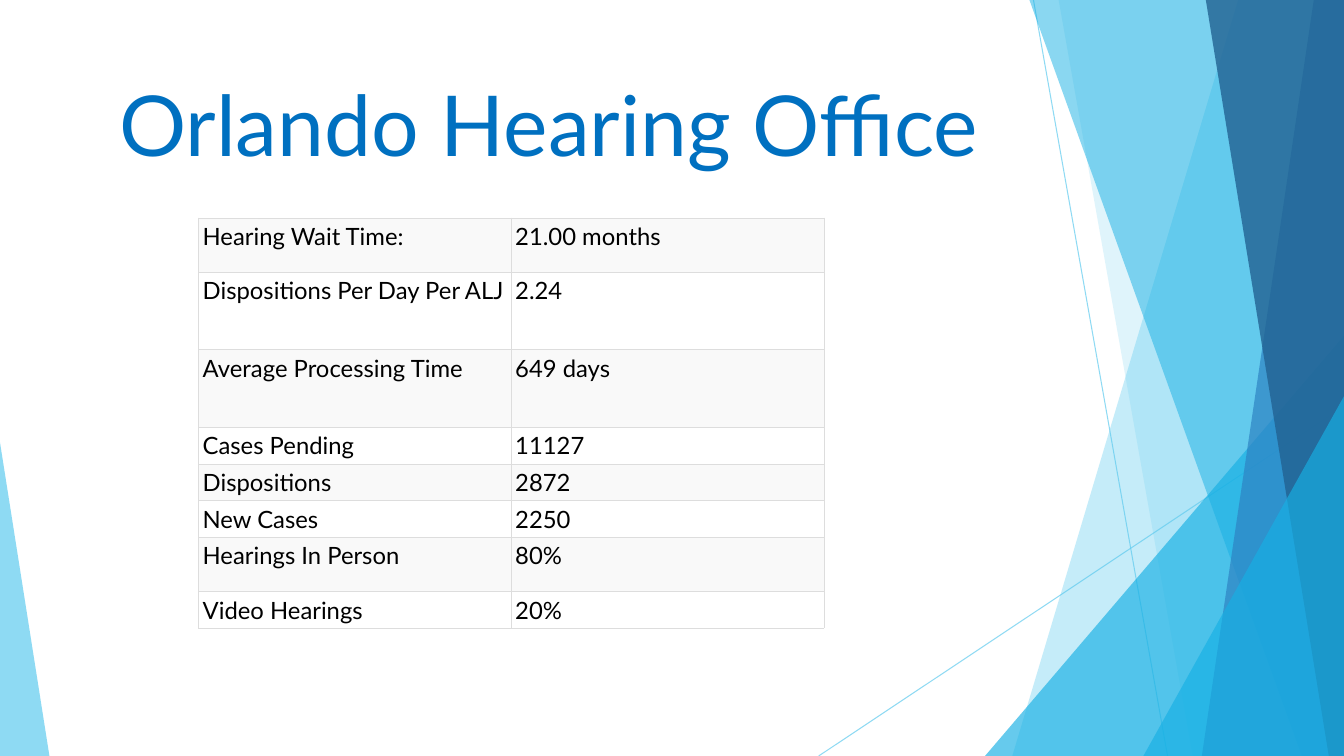
from lxml import etree
from pptx import Presentation
from pptx.dml.color import RGBColor
from pptx.enum.shapes import MSO_CONNECTOR, MSO_SHAPE
from pptx.enum.text import MSO_ANCHOR, PP_ALIGN
from pptx.oxml.ns import qn
from pptx.util import Inches, Pt

STRAIGHT = MSO_CONNECTOR.STRAIGHT
TRIANGLE = MSO_SHAPE.ISOSCELES_TRIANGLE
CENTER = PP_ALIGN.CENTER
TOP = MSO_ANCHOR.TOP

FONT = "Lato"
WIDTH, HEIGHT = 13.33, 7.5
SKY, CYAN, BLUE, NAVY = "5FCBEF", "17B0E4", "2E83C3", "226292"

# Bands reaching the right edge: top left x, bottom left x, colour, opacity %
BACK_BANDS = [(12.28, 10.04, SKY, 36), (10.5, 11.83, SKY, 20)]
FRONT_BANDS = [
    (10.21, 12.91, CYAN, 50),
    (13.03, 11.92, BLUE, 70),
    (11.96, 13.18, NAVY, 80),
]

# Label, value, row height
STATISTICS = [
    ("Hearing Wait Time:", "21.00 months", 0.54),
    ("Dispositions Per Day Per ALJ", "2.24", 0.77),
    ("Average Processing Time", "649 days", 0.77),
    ("Cases Pending", "11127", 0.36),
    ("Dispositions", "2872", 0.36),
    ("New Cases", "2250", 0.36),
    ("Hearings In Person", "80%", 0.54),
    ("Video Hearings", "20%", 0.36),
]


def rgb(color):
    return RGBColor.from_string(color)


def set_opacity(fill_owner, percent):
    color = next(fill_owner.iter(qn("a:srgbClr")))
    etree.SubElement(color, qn("a:alpha"), val=str(percent * 1000))


def paint(shape, color, opacity):
    shape.shadow.inherit = False
    shape.fill.solid()
    shape.fill.fore_color.rgb = rgb(color)
    shape.line.fill.background()
    set_opacity(shape.fill._xPr, opacity)


def add_band(slide, top_x, bottom_x, color, opacity):
    corners = [(WIDTH, 0), (WIDTH, HEIGHT), (bottom_x, HEIGHT)]
    outline = slide.shapes.build_freeform(Inches(top_x), 0)
    outline.add_line_segments([(Inches(x), Inches(y)) for x, y in corners])
    paint(outline.convert_to_shape(), color, opacity)


def add_corner(slide, left, top, width, peak, color, opacity):
    corner = slide.shapes.add_shape(
        TRIANGLE, Inches(left), Inches(top), Inches(width), Inches(HEIGHT - top))
    corner.adjustments[0] = peak
    paint(corner, color, opacity)


def add_thin_line(slide, x1, y1, x2, y2):
    thin_line = slide.shapes.add_connector(
        STRAIGHT, Inches(x1), Inches(y1), Inches(x2), Inches(y2))
    thin_line.line.color.rgb = rgb(SKY)
    thin_line.line.width = Pt(0.75)
    properties = thin_line._element.spPr
    set_opacity(properties, 70)
    etree.SubElement(properties, qn("a:effectLst"))


def format_text(paragraph, size, color):
    for run in paragraph.runs:
        run.font.name = FONT
        run.font.size = Pt(size)
        run.font.color.rgb = rgb(color)


def add_title(slide, text):
    title = slide.shapes.title
    title.left, title.top = Inches(0.74), Inches(0.67)
    title.width, title.height = Inches(9.4), Inches(1.44)
    title.text_frame.text = text
    title.text_frame.vertical_anchor = TOP
    heading = title.text_frame.paragraphs[0]
    heading.alignment = CENTER
    format_text(heading, 60, "0070C0")


def add_borders(cell, color, width):
    properties = cell._tc.get_or_add_tcPr()
    for side in ("lnL", "lnR", "lnT", "lnB"):
        border = etree.SubElement(properties, qn(f"a:{side}"), w=str(Pt(width)))
        solid = etree.SubElement(border, qn("a:solidFill"))
        etree.SubElement(solid, qn("a:srgbClr"), val=color)


def fill_cell(cell, text, background):
    cell.text_frame.text = text
    format_text(cell.text_frame.paragraphs[0], 17, "000000")
    cell.margin_left = cell.margin_right = Inches(0.04)
    cell.margin_top = cell.margin_bottom = Inches(0.04)
    add_borders(cell, "DDDDDD", 0.38)
    cell.fill.solid()
    cell.fill.fore_color.rgb = rgb(background)


def add_statistics(slide):
    table = slide.shapes.add_table(
        len(STATISTICS), 2, Inches(1.97), Inches(2.16), Inches(6.2), Inches(4.06)).table
    table.first_row = table.horz_banding = False
    for index, (label, value, height) in enumerate(STATISTICS):
        table.rows[index].height = Inches(height)
        background = "FFFFFF" if index % 2 else "F9F9F9"
        for column, text in enumerate((label, value)):
            fill_cell(table.cell(index, column), text, background)


def main():
    presentation = Presentation()
    presentation.slide_width = Inches(WIDTH)
    presentation.slide_height = Inches(HEIGHT)
    slide = presentation.slides.add_slide(presentation.slide_layouts[5])

    # Decoration, from back to front
    add_thin_line(slide, 10.25, 0, 11.58, HEIGHT)
    add_thin_line(slide, WIDTH, 4.03, 8.12, HEIGHT)
    for band in BACK_BANDS:
        add_band(slide, *band)
    add_corner(slide, 9.77, 3.33, 3.56, 1, CYAN, 66)
    for band in FRONT_BANDS:
        add_band(slide, *band)
    add_corner(slide, 11.34, 3.93, 1.99, 1, CYAN, 66)
    add_corner(slide, 0, 4.39, 0.49, 0, SKY, 70)

    # Content
    add_title(slide, "Orlando Hearing Office")
    add_statistics(slide)

    presentation.save("out.pptx")


if __name__ == "__main__":
    main()
